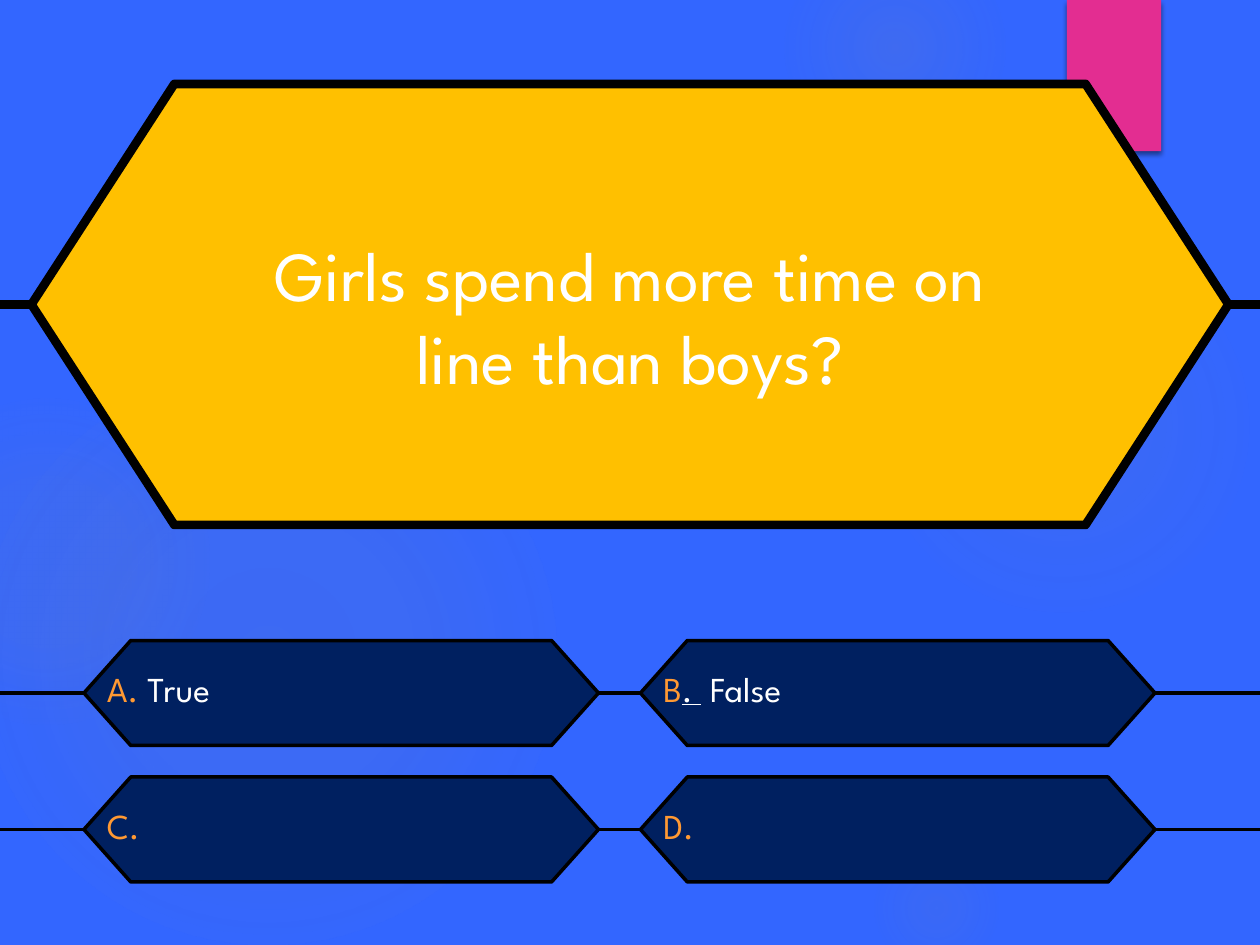
from lxml.etree import SubElement
from pptx import Presentation
from pptx.dml.color import RGBColor
from pptx.enum.shapes import MSO_CONNECTOR, MSO_SHAPE
from pptx.enum.text import MSO_ANCHOR, MSO_AUTO_SIZE, PP_ALIGN
from pptx.oxml import parse_xml
from pptx.oxml.ns import nsdecls, qn
from pptx.util import Emu, Pt

PX = 7620  # 120 px to the inch
WIDTH, HEIGHT = 1200, 900

BLUE = RGBColor(0x33, 0x66, 0xFF)
NAVY = RGBColor(0x00, 0x20, 0x60)
GOLD = RGBColor(0xFF, 0xC0, 0x00)
PINK = RGBColor(0xE3, 0x2D, 0x91)
ORANGE = RGBColor(0xFF, 0x99, 0x33)
GRAY = RGBColor(0x8A, 0x8A, 0x9C)
WHITE = RGBColor(0xFF, 0xFF, 0xFF)
BLACK = RGBColor(0x00, 0x00, 0x00)

# left, top, diameter, then (position, opacity) stops in percent
GLOWS = [
    (827, 220, 370, [(0, 7), (36, 6), (69, 0)]),
    (747, -60, 210, [(0, 14), (36, 7), (73, 0)]),
    (827, 800, 130, [(0, 9), (36, 5), (66, 0)]),
    (-20, 350, 550, [(0, 11), (36, 10), (75, 0)]),
    (-110, 380, 310, [(0, 8), (36, 8), (72, 0)]),
]

ANSWER_LEFTS = (80, 610)
ANSWER_TOPS = (610, 740)
ANSWER_WIDTH, ANSWER_HEIGHT = 490, 100
# one list of (text, colour, underlined) runs per answer, row by row
ANSWERS = [
    [("A. ", ORANGE, False), ("True", WHITE, False)],
    [("B", ORANGE, False), (". ", WHITE, True), (" False", WHITE, False)],
    [("C.", ORANGE, False)],
    [("D.", ORANGE, False)],
]


def px(*lengths):
    return [Emu(length * PX) for length in lengths]


class QuizSlide:
    font_name = "League Spartan"

    def __init__(self, presentation):
        self.slide = presentation.slides.add_slide(presentation.slide_layouts[5])
        fill = self.slide.background.fill
        fill.solid()
        fill.fore_color.rgb = BLUE

    def style(self, font, size, color=None):
        font.name = self.font_name
        font.size = Pt(size)
        if color is not None:
            font.color.rgb = color

    def shape(self, kind, box, color=None, line_width=0):
        shape = self.slide.shapes.add_shape(kind, *px(*box))
        shape.shadow.inherit = False
        if color is not None:
            shape.fill.solid()
            shape.fill.fore_color.rgb = color
        if line_width:
            shape.line.color.rgb = BLACK
            shape.line.width = Pt(line_width)
        else:
            shape.line.fill.background()
        return shape

    def glow(self, left, top, diameter, stops):
        """Add a circle that fades out from its centre."""
        shape = self.shape(MSO_SHAPE.OVAL, (left, top, diameter, diameter))
        stop_xml = "".join(
            f'<a:gs pos="{position * 1000}"><a:srgbClr val="{GRAY}">'
            f'<a:alpha val="{opacity * 1000}"/></a:srgbClr></a:gs>'
            for position, opacity in stops
        )
        gradient = parse_xml(
            f'<a:gradFill {nsdecls("a")}><a:gsLst>{stop_xml}</a:gsLst>'
            '<a:path path="circle">'
            '<a:fillToRect l="50000" t="50000" r="50000" b="50000"/>'
            "</a:path></a:gradFill>"
        )
        shape.element.spPr.find(qn("a:prstGeom")).addnext(gradient)

    def ribbon(self, box):
        shape = self.shape(MSO_SHAPE.RECTANGLE, box, PINK)
        effects = shape.element.spPr.find(qn("a:effectLst"))
        shadow = SubElement(effects, qn("a:outerShdw"), blurRad=str(Pt(3)),
                            dist=str(Pt(2)), dir="5400000", rotWithShape="0")
        color = SubElement(shadow, qn("a:srgbClr"), val=str(BLACK))
        SubElement(color, qn("a:alpha"), val="45000")

    def hexagon(self, box, color, line_width, slant):
        shape = self.shape(MSO_SHAPE.HEXAGON, box, color, line_width)
        shape.adjustments[0] = slant

    def line(self, start, end, y, width):
        connector = self.slide.shapes.add_connector(
            MSO_CONNECTOR.STRAIGHT, *px(start, y, end, y))
        connector.line.color.rgb = BLACK
        connector.line.width = Pt(width)
        SubElement(connector.element.spPr, qn("a:effectLst"))

    def question(self, text, box, top_margin):
        title = self.slide.shapes.title
        title.left, title.top, title.width, title.height = px(*box)
        self.slide.shapes.element.append(title.element)  # bring to front
        frame = title.text_frame
        frame.text = text
        frame.word_wrap = True
        frame.auto_size = MSO_AUTO_SIZE.NONE
        frame.vertical_anchor = MSO_ANCHOR.TOP
        frame.margin_top = px(top_margin)[0]
        paragraph = frame.paragraphs[0]
        paragraph.alignment = PP_ALIGN.CENTER
        self.style(paragraph.font, 40, WHITE)

    def answer(self, left, top, runs):
        self.hexagon((left, top, ANSWER_WIDTH, ANSWER_HEIGHT), NAVY, 2, 0.446)
        width = 150 if len(runs) > 1 else 66
        text_box = self.slide.shapes.add_textbox(
            *px(left + 10, top + 20, width, 53))
        text_box.text_frame.word_wrap = True
        paragraph = text_box.text_frame.paragraphs[0]
        self.style(paragraph.font, 20)
        for text, color, underlined in runs:
            run = paragraph.add_run()
            run.text = text
            self.style(run.font, 20, color)
            if underlined:
                run.font.underline = True


def main():
    presentation = Presentation()
    presentation.slide_width, presentation.slide_height = px(WIDTH, HEIGHT)
    quiz = QuizSlide(presentation)

    for glow in GLOWS:
        quiz.glow(*glow)
    quiz.ribbon((1016, 0, 90, 144))

    quiz.hexagon((30, 80, 1140, 420), GOLD, 5, 0.324)
    for start, end in ((0, 30), (1170, WIDTH)):
        quiz.line(start, end, 290, 5)
    quiz.question("Girls spend more time on line than boys?",
                  (205, 142, 790, 302), 78)

    line_starts = [0] + [left + ANSWER_WIDTH for left in ANSWER_LEFTS]
    line_ends = [*ANSWER_LEFTS, WIDTH]
    for row, top in enumerate(ANSWER_TOPS):
        for start, end in zip(line_starts, line_ends):
            quiz.line(start, end, top + ANSWER_HEIGHT // 2, 2)
        for column, left in enumerate(ANSWER_LEFTS):
            quiz.answer(left, top, ANSWERS[row * len(ANSWER_LEFTS) + column])

    presentation.save("out.pptx")


if __name__ == "__main__":
    main()
